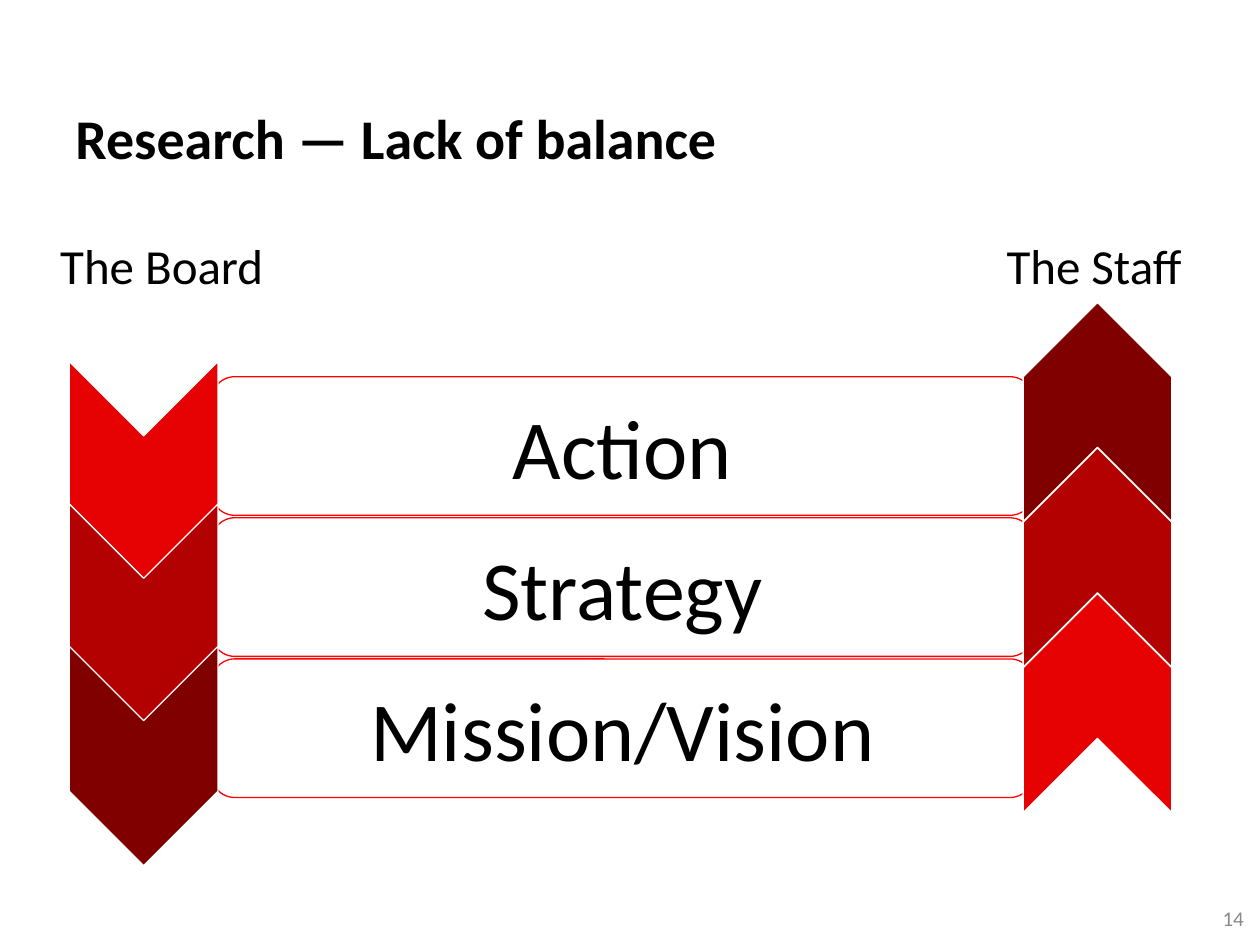
from pptx import Presentation
from pptx.dml.color import RGBColor
from pptx.enum.shapes import MSO_SHAPE as Shape
from pptx.enum.text import MSO_ANCHOR as Anchor, PP_ALIGN as Align
from pptx.util import Inches, Pt

COLORS = {"text": "000000", "number": "898989", "outline": "FF0000", "edge": "FFFFFF",
          "bright": "E60202", "medium": "B30101", "dark": "800000"}

# Content: text, box (left, top, width, height), format, anchor, alignment, wrap
TITLE = {"size": Pt(32), "bold": True}
HEADING = {"size": Pt(28)}
LEVEL = {"size": Pt(48)}
NUMBER = {"size": Pt(12)}
LABELS = [
    ("14", (9.5, 7.11, 0.47, 0.35), NUMBER, "number", Anchor.MIDDLE, Align.RIGHT, True),
    ("Research — Lack of balance", (0.5, 0.5, 9, 1.17), TITLE, "text",
     Anchor.MIDDLE, Align.LEFT, True),
    ("The Board", (0.38, 1.82, 1.84, 0.57), HEADING, "text", Anchor.TOP, Align.LEFT, False),
    ("The Staff", (7.89, 1.82, 1.62, 0.57), HEADING, "text", Anchor.TOP, Align.LEFT, False),
]
LEVELS = ["Action", "Strategy", "Mission/Vision"]
SHADES = ["bright", "medium", "dark"]
# Arrow columns: left, first top, step, rotation, shades from top to bottom
ARROWS = [
    (0.27, 3.15, 1.13, 90, SHADES),
    (7.84, 2.68, 1.155, 270, SHADES[::-1]),
]
LEVEL_LEFT, LEVEL_TOP, LEVEL_STEP = 1.68, 2.99, 1.12
LEVEL_SIZE = (6.52, 1.1)
ARROW_SIZE = (1.74, 1.18)


def color(name):
    return RGBColor.from_string(COLORS[name])


def write(shape, text, font_format, color_name, anchor, alignment, wrap=True):
    frame = shape.text_frame
    frame.word_wrap = wrap
    frame.vertical_anchor = anchor
    paragraph = frame.paragraphs[0]
    paragraph.text = text
    paragraph.alignment = alignment
    font = paragraph.runs[0].font
    for name, value in {"name": "Calibri", **font_format}.items():
        setattr(font, name, value)
    font.color.rgb = color(color_name)


def add_outlined(slide, kind, box, line_color, fill_color=None):
    shape = slide.shapes.add_shape(kind, *map(Inches, box))
    shape.shadow.inherit = False
    shape.line.color.rgb = color(line_color)
    shape.line.width = Pt(0.75)
    if fill_color:
        shape.fill.solid()
        shape.fill.fore_color.rgb = color(fill_color)
    else:
        shape.fill.background()
    return shape


def main():
    presentation = Presentation()
    presentation.slide_width, presentation.slide_height = Inches(10), Inches(7.5)
    slide = presentation.slides.add_slide(presentation.slide_layouts[6])

    # Title, column headings and slide number
    for text, box, *style in LABELS:
        write(slide.shapes.add_textbox(*map(Inches, box)), text, *style)

    # Stacked levels
    for row, text in enumerate(LEVELS):
        box = (LEVEL_LEFT, LEVEL_TOP + row * LEVEL_STEP, *LEVEL_SIZE)
        level = add_outlined(slide, Shape.ROUNDED_RECTANGLE, box, "outline")
        write(level, text, LEVEL, "text", Anchor.MIDDLE, Align.CENTER)

    # Arrow columns: the board points down, the staff points up
    for left, top, step, rotation, shades in ARROWS:
        for row, shade in enumerate(shades):
            box = (left, top + row * step, *ARROW_SIZE)
            add_outlined(slide, Shape.CHEVRON, box, "edge", shade).rotation = rotation

    presentation.save("out.pptx")


if __name__ == "__main__":
    main()
